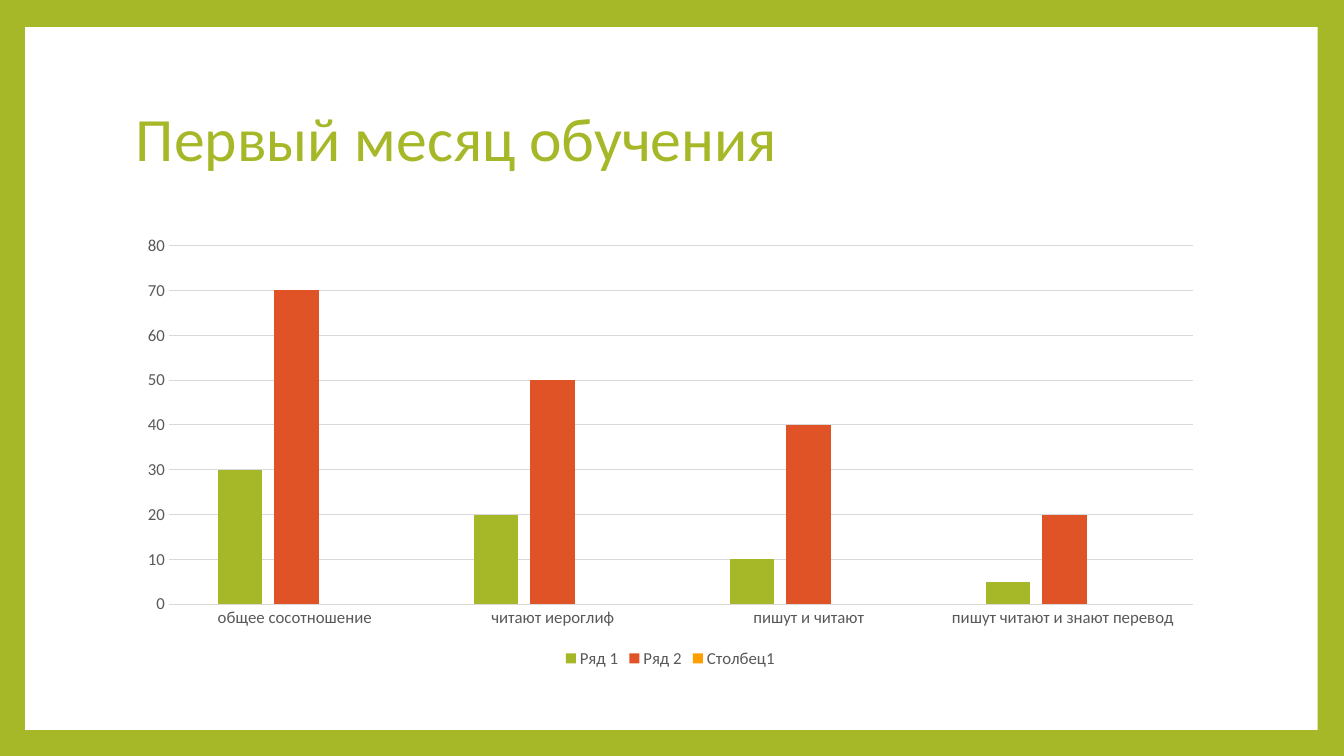
from dataclasses import dataclass

from pptx import Presentation
from pptx.chart.data import CategoryChartData
from pptx.dml.color import RGBColor
from pptx.enum.chart import XL_CHART_TYPE, XL_LEGEND_POSITION, XL_TICK_MARK
from pptx.enum.shapes import MSO_SHAPE
from pptx.enum.text import MSO_ANCHOR
from pptx.util import Pt


@dataclass(frozen=True)
class Theme:
    font: str = "Calibri"
    green: RGBColor = RGBColor(0xA6, 0xB7, 0x27)
    red: RGBColor = RGBColor(0xDF, 0x53, 0x27)
    orange: RGBColor = RGBColor(0xFE, 0x9E, 0x00)
    white: RGBColor = RGBColor(0xFF, 0xFF, 0xFF)
    label: RGBColor = RGBColor(0x59, 0x59, 0x59)
    rule: RGBColor = RGBColor(0xD9, 0xD9, 0xD9)
    title_size: int = 44
    label_size: int = 12


theme = Theme()


def apply_format(target, values):
    for name, value in values.items():
        setattr(target, name, value)


def style_font(font, size, color):
    apply_format(font, {"name": theme.font, "size": Pt(size), "bold": False})
    font.color.rgb = color


# Page with a green border around a white panel
deck = Presentation()
apply_format(deck, {"slide_width": Pt(960), "slide_height": Pt(540)})
page = deck.slides.add_slide(deck.slide_layouts[6])
page.background.fill.solid()
page.background.fill.fore_color.rgb = theme.green

panel = page.shapes.add_shape(
    MSO_SHAPE.RECTANGLE, Pt(18), Pt(19.3), Pt(923.2), Pt(502)
)
panel.shadow.inherit = False
panel.fill.solid()
panel.fill.fore_color.rgb = theme.white
panel.line.fill.background()

# Title
box = page.shapes.add_textbox(Pt(90), Pt(48), Pt(777.6), Pt(106.56))
apply_format(box.text_frame, {"word_wrap": True, "vertical_anchor": MSO_ANCHOR.MIDDLE})
para = box.text_frame.paragraphs[0]
para.line_spacing = 0.9
span = para.add_run()
span.text = "Первый месяц обучения"
style_font(span.font, theme.title_size, theme.green)

# Chart data
series_rows = [
    ("Ряд 1", (30, 20, 10, 5), theme.green),
    ("Ряд 2", (70, 50, 40, 20), theme.red),
    ("Столбец1", (None,) * 4, theme.orange),
]
chart_data = CategoryChartData()
chart_data.categories = [
    "общее сосотношение ",
    "читают иероглиф",
    "пишут и читают",
    "пишут читают и знают перевод ",
]
for name, values, _ in series_rows:
    chart_data.add_series(name, values)

# Column chart
chart = page.shapes.add_chart(
    XL_CHART_TYPE.COLUMN_CLUSTERED, Pt(90), Pt(162), Pt(777.6), Pt(318.24), chart_data
).chart
apply_format(chart, {"has_title": False, "has_legend": True})
style_font(chart.font, theme.label_size, theme.label)

plot = chart.plots[0]
apply_format(plot, {"gap_width": 219, "overlap": -27, "vary_by_categories": False})
for series, (_, _, color) in zip(plot.series, series_rows):
    series.invert_if_negative = False
    series.format.fill.solid()
    series.format.fill.fore_color.rgb = color

# Axes and gridlines
for axis in (chart.category_axis, chart.value_axis):
    apply_format(
        axis,
        {"major_tick_mark": XL_TICK_MARK.NONE, "minor_tick_mark": XL_TICK_MARK.NONE},
    )
    style_font(axis.tick_labels.font, theme.label_size, theme.label)

apply_format(
    chart.value_axis,
    {
        "minimum_scale": 0,
        "maximum_scale": 80,
        "major_unit": 10,
        "has_major_gridlines": True,
    },
)
chart.value_axis.format.line.fill.background()
for line in (
    chart.category_axis.format.line,
    chart.value_axis.major_gridlines.format.line,
):
    line.width = Pt(0.75)
    line.color.rgb = theme.rule

# Legend
apply_format(
    chart.legend,
    {"position": XL_LEGEND_POSITION.BOTTOM, "include_in_layout": False},
)
style_font(chart.legend.font, theme.label_size, theme.label)

deck.save("out.pptx")
